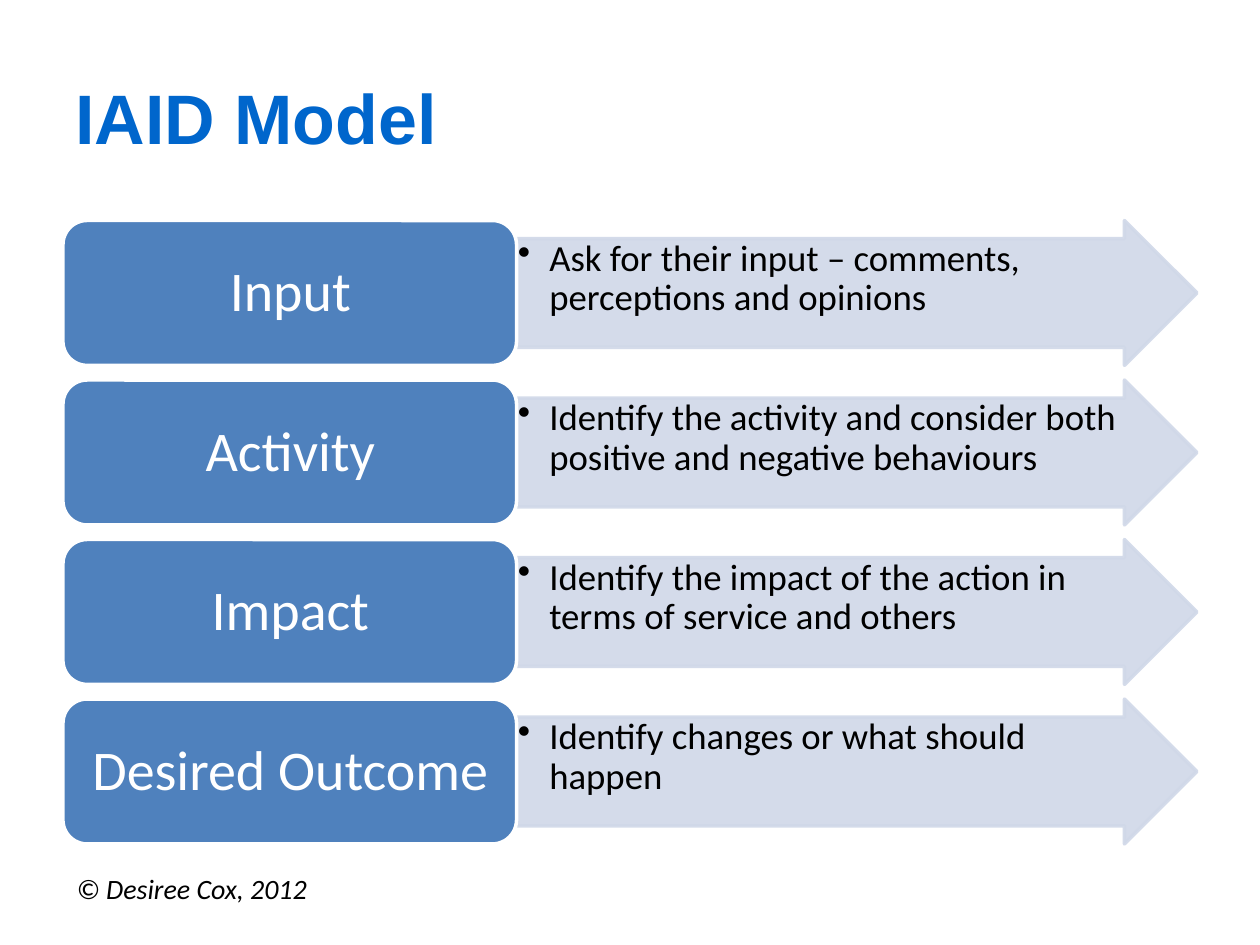
"""Build the IAID Model slide: four labelled steps, each with an arrow."""
from dataclasses import dataclass

from lxml import etree
from pptx import Presentation, util as u
from pptx.dml.color import RGBColor
from pptx.enum import shapes, text
from pptx.oxml import ns

TITLE_BLUE = RGBColor(0x00, 0x66, 0xCC)
BOX_BLUE = RGBColor(0x4F, 0x81, 0xBD)
ARROW_BLUE = RGBColor(0xD0, 0xD8, 0xE8)
WHITE = RGBColor(0xFF, 0xFF, 0xFF)
BLACK = RGBColor(0x00, 0x00, 0x00)

LEFT, TOP, PITCH, HEIGHT = 0.5, 1.75, 1.266, 1.15
BOX_WIDTH, ARROW_WIDTH = 3.6, 5.4
ARROW_LEFT = LEFT + BOX_WIDTH


@dataclass
class Step:
    label: str
    detail: str


STEPS = [
    Step("Input", "Ask for their input – comments, perceptions and opinions"),
    Step("Activity", "Identify the activity and consider both positive and negative behaviours"),
    Step("Impact", "Identify the impact of the action in terms of service and others"),
    Step("Desired Outcome", "Identify changes or what should happen"),
]


def write(tf, content: str, *, size: float, color: RGBColor, font: str = "Calibri",
          bold: bool = False, italic: bool = False, align=text.PP_ALIGN.LEFT,
          anchor=text.MSO_ANCHOR.TOP, insets: tuple = (0.1, 0.05), wrap: bool = True,
          spacing: float | None = None, bullet: bool = False) -> None:
    tf.word_wrap = wrap
    tf.vertical_anchor = anchor
    tf.margin_left = tf.margin_right = u.Inches(insets[0])
    tf.margin_top = tf.margin_bottom = u.Inches(insets[1])
    p = tf.paragraphs[0]
    p.alignment = align
    if spacing:
        p.line_spacing = spacing
    if bullet:
        pPr = p._p.get_or_add_pPr()
        pPr.set("marL", str(u.Inches(0.25)))
        pPr.set("indent", str(-u.Inches(0.25)))
        etree.SubElement(pPr, ns.qn("a:buChar"), char="•")
    r = p.add_run()
    r.text = content
    r.font.name, r.font.size = font, u.Pt(size)
    r.font.bold, r.font.italic = bold, italic
    r.font.color.rgb = color


def add_box(s, x: float, y: float, w: float, h: float):
    return s.shapes.add_textbox(*map(u.Inches, (x, y, w, h))).text_frame


def add_shape(s, kind, x: float, y: float, w: float, fill: RGBColor, line: RGBColor):
    sp = s.shapes.add_shape(kind, *map(u.Inches, (x, y, w, HEIGHT)))
    sp.shadow.inherit = False
    sp.fill.solid()
    sp.fill.fore_color.rgb = fill
    sp.line.color.rgb = line
    sp.line.width = u.Pt(2)
    return sp


def add_step(s, step: Step, y: float) -> None:
    arrow = add_shape(s, shapes.MSO_SHAPE.RIGHT_ARROW, ARROW_LEFT, y, ARROW_WIDTH,
                      ARROW_BLUE, ARROW_BLUE)
    arrow.adjustments[0], arrow.adjustments[1] = 0.75, 0.5
    for clr in arrow._element.spPr.iter(ns.qn("a:srgbClr")):
        etree.SubElement(clr, ns.qn("a:alpha"), val="90000")
    write(add_box(s, ARROW_LEFT, y + 0.14, 4.97, 0.86), step.detail, size=21, color=BLACK,
          insets=(0.01, 0.01), spacing=0.9, bullet=True)
    add_shape(s, shapes.MSO_SHAPE.ROUNDED_RECTANGLE, LEFT, y, BOX_WIDTH, BOX_BLUE, WHITE)
    write(add_box(s, LEFT + 0.06, y + 0.06, 3.49, 1.04), step.label, size=32, color=WHITE,
          align=text.PP_ALIGN.CENTER, anchor=text.MSO_ANCHOR.MIDDLE,
          insets=(0.13, 0.07), spacing=0.9)


def main() -> None:
    prs = Presentation()
    prs.slide_width, prs.slide_height = u.Inches(10), u.Inches(7.5)
    s = prs.slides.add_slide(prs.slide_layouts[5])
    title = s.shapes.title
    title.left, title.top, title.width, title.height = map(u.Inches, (LEFT, 0.3, 9, 1.25))
    write(title.text_frame, "IAID Model", size=40, color=TITLE_BLUE, font="Arial",
          bold=True, anchor=text.MSO_ANCHOR.MIDDLE)
    for i, step in enumerate(STEPS):
        add_step(s, step, TOP + i * PITCH)
    tf = add_box(s, 0.51, 6.87, 2.05, 0.37)
    tf.auto_size = text.MSO_AUTO_SIZE.SHAPE_TO_FIT_TEXT
    write(tf, "© Desiree Cox, 2012", size=16, color=BLACK, italic=True, wrap=False)
    prs.save("out.pptx")


if __name__ == "__main__":
    main()
